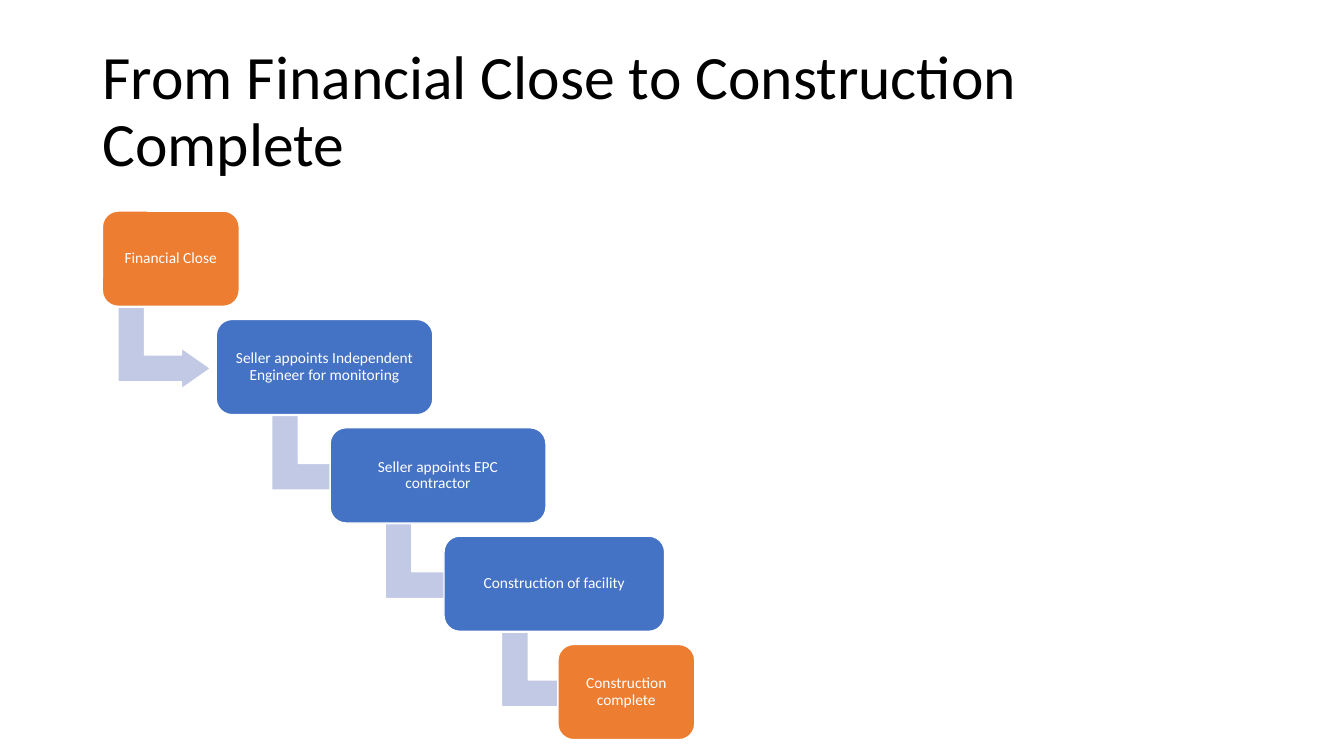
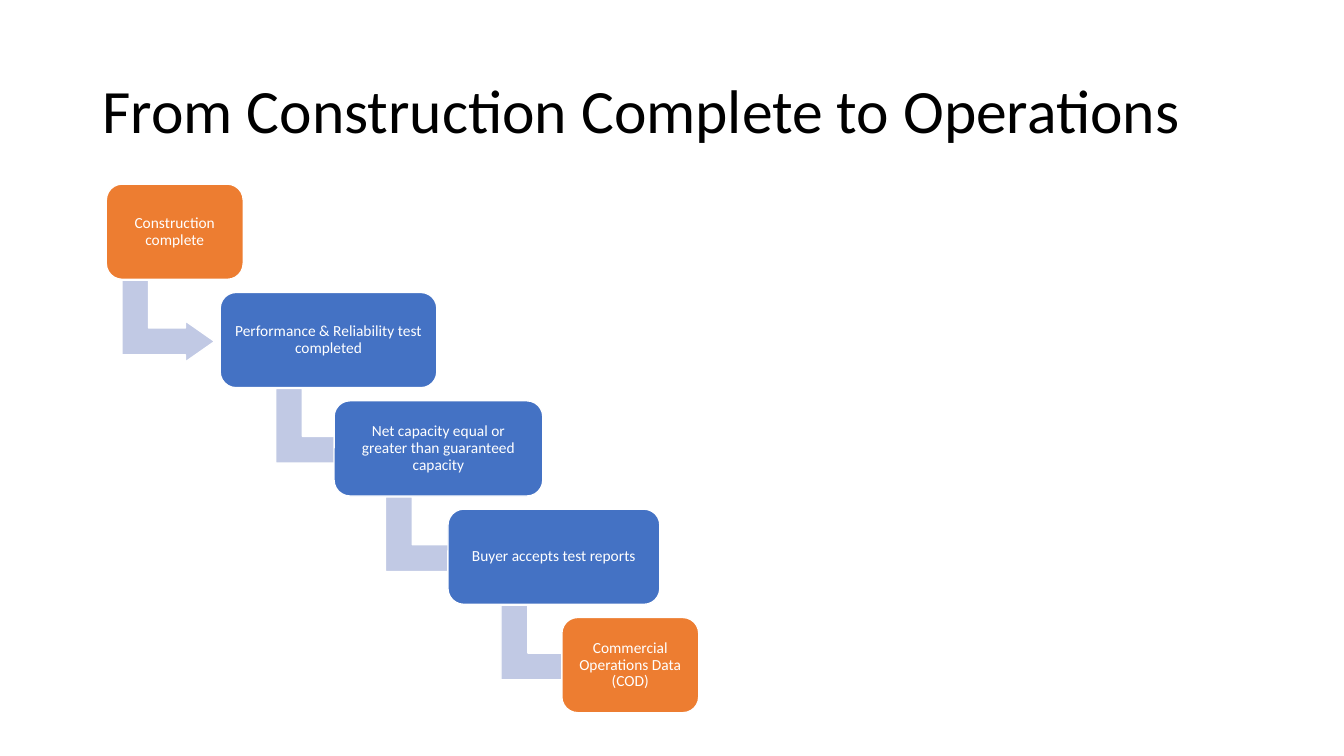
from dataclasses import dataclass

from pptx import Presentation
from pptx import util as u
from pptx.dml.color import RGBColor
from pptx.enum import shapes, text


@dataclass(frozen=True)
class Theme:
    font: str = "Calibri"
    title_size: int = 44
    step_size: int = 11
    title: str = "000000"
    paper: str = "FFFFFF"
    milestone: str = "ED7D31"
    task: str = "4472C4"
    arrow: str = "C1C9E4"


@dataclass(frozen=True)
class Step:
    label: str
    width: float = 3.45
    milestone: bool = False


@dataclass(frozen=True)
class Staircase:
    title: str
    left: float
    top: float
    steps: tuple[Step, ...]


THEME = Theme()

# Staircase geometry, in centimetres
STEP_X, STEP_Y = 2.87, 2.73
BOX_H = 2.4
ARROW_W, ARROW_H = 2.06, 2.34
ARROW_DROP = 2.28
ARROW_INSET = 2.39  # box width at which the arrow frame starts at the box edge
ARROW_ADJ = (0.328, 0.25, 0.358)
BOX_ADJ = (0.167,)

STAIRCASES = (
    Staircase("From Financial Close to Construction Complete", 2.58, 5.32, (
        Step("Financial Close", milestone=True),
        Step("Seller appoints Independent Engineer for monitoring", 5.46),
        Step("Seller appoints EPC contractor", 5.44),
        Step("Construction of facility", 5.56),
        Step("Construction complete", milestone=True),
    )),
    Staircase("From Construction Complete to Operations", 2.68, 4.64, (
        Step("Construction complete", milestone=True),
        Step("Performance & Reliability test completed", 5.46),
        Step("Net capacity equal or greater than guaranteed capacity", 5.26),
        Step("Buyer accepts test reports", 5.34),
        Step("Commercial Operations Data (COD)", milestone=True),
    )),
)


def set_all(target, values: dict) -> None:
    for name, value in values.items():
        setattr(target, name, value)


def write(tf, label: str, size: int, color: str, align) -> None:
    """Fill a text frame with one middle-anchored paragraph."""
    set_all(tf, {"word_wrap": True, "auto_size": text.MSO_AUTO_SIZE.NONE,
                 "vertical_anchor": text.MSO_ANCHOR.MIDDLE})
    p = tf.paragraphs[0]
    set_all(p, {"alignment": align, "line_spacing": 0.9})
    r = p.add_run()
    r.text = label
    set_all(r.font, {"name": THEME.font, "size": u.Pt(size)})
    r.font.color.rgb = RGBColor.from_string(color)


def add_title(s, label: str) -> None:
    sp = s.shapes.title
    set_all(sp, {"left": u.Cm(2.33), "top": u.Cm(1.01),
                 "width": u.Cm(29.21), "height": u.Cm(3.68)})
    write(sp.text_frame, label, THEME.title_size, THEME.title,
          text.PP_ALIGN.LEFT)


def add_block(group, kind, box: tuple[float, ...], color: str,
              adjustments: tuple[float, ...]):
    """Draw one filled preset shape with a thin paper-coloured outline."""
    sp = group.shapes.add_shape(kind, *(u.Cm(v) for v in box))
    sp.shadow.inherit = False
    sp.fill.solid()
    sp.fill.fore_color.rgb = RGBColor.from_string(color)
    sp.line.color.rgb = RGBColor.from_string(THEME.paper)
    sp.line.width = u.Pt(1)
    for i, value in enumerate(adjustments):
        sp.adjustments[i] = value
    return sp


def add_arrow(group, left: float, top: float, box_width: float) -> None:
    x = left + (box_width - ARROW_INSET) / 2
    sp = add_block(group, shapes.MSO_SHAPE.BENT_UP_ARROW,
                   (x, top + ARROW_DROP, ARROW_W, ARROW_H),
                   THEME.arrow, ARROW_ADJ)
    sp.rotation = 90


def add_step(group, step: Step, left: float, top: float) -> None:
    color = THEME.milestone if step.milestone else THEME.task
    sp = add_block(group, shapes.MSO_SHAPE.ROUNDED_RECTANGLE,
                   (left, top, step.width, BOX_H), color, BOX_ADJ)
    tf = sp.text_frame
    set_all(tf, dict.fromkeys(("margin_left", "margin_right", "margin_top",
                               "margin_bottom"), u.Cm(0.24)))
    write(tf, step.label, THEME.step_size, THEME.paper, text.PP_ALIGN.CENTER)


def add_staircase(prs, stairs: Staircase) -> None:
    s = prs.slides.add_slide(prs.slide_layouts[5])
    add_title(s, stairs.title)
    group = s.shapes.add_group_shape()
    last = len(stairs.steps) - 1
    for i, step in enumerate(stairs.steps):
        left, top = stairs.left + i * STEP_X, stairs.top + i * STEP_Y
        # Each arrow lies behind the boxes it joins
        if i < last:
            add_arrow(group, left, top, step.width)
        add_step(group, step, left, top)


def main() -> None:
    prs = Presentation()
    set_all(prs, {"slide_width": u.Cm(33.87), "slide_height": u.Cm(19.05)})
    for stairs in STAIRCASES:
        add_staircase(prs, stairs)
    prs.save("out.pptx")


if __name__ == "__main__":
    main()
